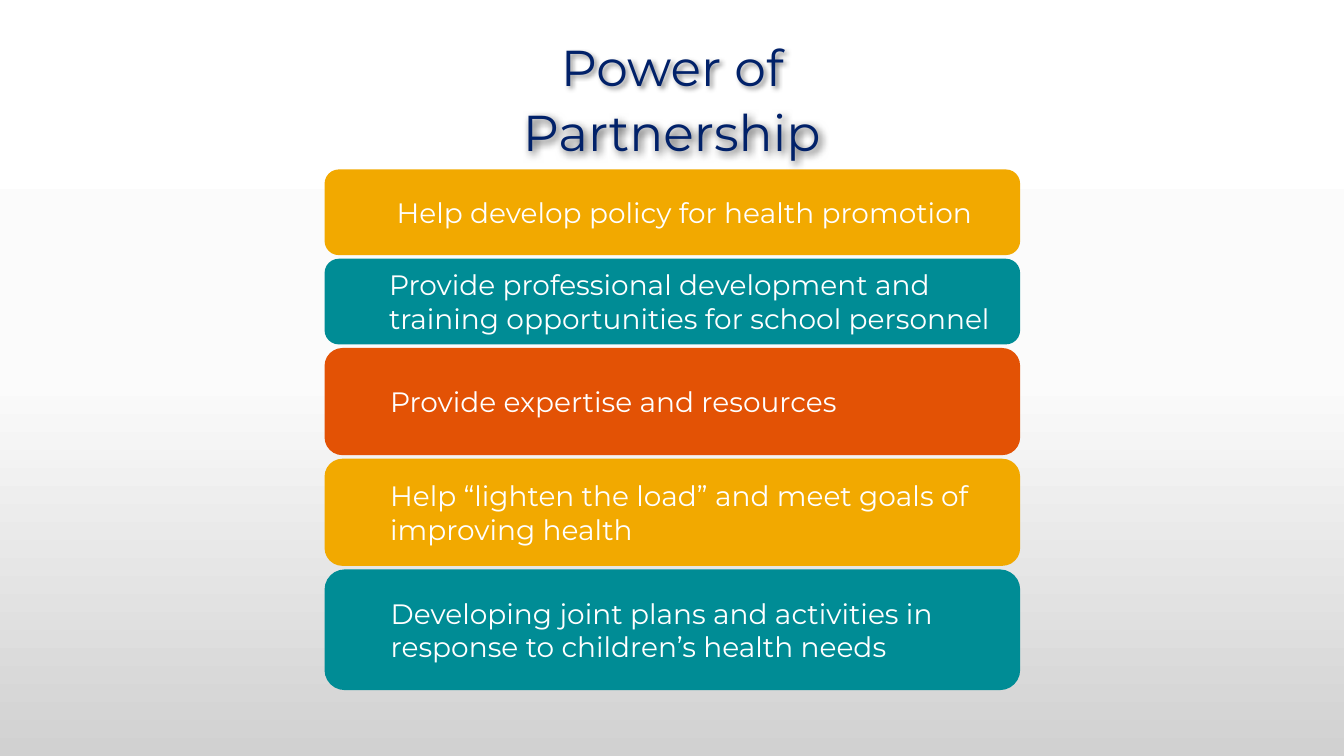
from copy import deepcopy
from dataclasses import dataclass

from lxml.etree import SubElement
from pptx import Presentation
from pptx.dml.color import RGBColor
from pptx.enum.shapes import MSO_SHAPE
from pptx.enum.text import MSO_ANCHOR, MSO_AUTO_SIZE, PP_ALIGN
from pptx.oxml.ns import qn
from pptx.slide import Slide
from pptx.util import Cm, Pt

COLOURS = {
    "navy": "012169",
    "gold": "F2A900",
    "teal": "008C95",
    "orange": "E35205",
    "white": "FFFFFF",
    "shadow": "000000",
}
BACKGROUND_STOPS = [(0, "FFFFFF"), (0.5, "FBFBFB"), (1, "D1D1D1")]
FONT = "Montserrat"
BAR_LEFT, BAR_TOP, BAR_WIDTH, BAR_GAP = 8.18, 4.27, 17.53, 0.09


@dataclass
class Heading:
    text: str
    left: float
    top: float
    width: float
    height: float
    anchor: MSO_ANCHOR
    top_inset: float
    shadow_blur: float
    shadow_opacity: int


@dataclass
class Bar:
    text: str
    colour: str
    height: float
    indent: float = 1.27


HEADINGS = [
    Heading("Power of", 2.33, 0.53, 29.21, 2.46, MSO_ANCHOR.MIDDLE, 0.13, 3, 45),
    Heading("Partnership", 4.23, 2.44, 25.4, 1.22, MSO_ANCHOR.TOP, 0.28, 6, 75),
]
BARS = [
    Bar("Help develop policy for health promotion", "gold", 2.16, 1.46),
    Bar("Provide professional development and training opportunities for school personnel",
        "teal", 2.16),
    Bar("Provide expertise and resources", "orange", 2.7),
    Bar("Help “lighten the load” and meet goals of improving health", "gold", 2.7),
    Bar("Developing joint plans and activities in response to children’s health needs",
        "teal", 3.04),
]


def paint_background(page: Slide) -> None:
    fill = page.background.fill
    fill.gradient()
    fill.gradient_angle = 270
    stop_list = next(page.element.iter(qn("a:gsLst")))
    stop_list.append(deepcopy(stop_list[-1]))
    for stop, (position, colour) in zip(fill.gradient_stops, BACKGROUND_STOPS):
        stop.position = position
        stop.color.rgb = RGBColor.from_string(colour)


def add_span(para, text: str, size: int, colour: str) -> None:
    span = para.add_run()
    span.text = text
    span.font.name = FONT
    span.font.size = Pt(size)
    span.font.color.rgb = RGBColor.from_string(COLOURS[colour])


def add_soft_shadow(box, blur: float, opacity: int) -> None:
    box.shadow.inherit = False
    effects = box.element.spPr.find(qn("a:effectLst"))
    shadow = SubElement(effects, qn("a:outerShdw"), blurRad=str(Pt(blur)),
                        dist=str(Pt(2)), dir="2700000", algn="tl", rotWithShape="0")
    colour = SubElement(shadow, qn("a:srgbClr"), val=COLOURS["shadow"])
    SubElement(colour, qn("a:alpha"), val=str(opacity * 1000))


def fill_heading(box, heading: Heading) -> None:
    box.left, box.top = Cm(heading.left), Cm(heading.top)
    box.width, box.height = Cm(heading.width), Cm(heading.height)
    frame = box.text_frame
    frame.auto_size = MSO_AUTO_SIZE.NONE
    frame.vertical_anchor = heading.anchor
    frame.margin_top = Cm(heading.top_inset)
    para = frame.paragraphs[0]
    para.alignment = PP_ALIGN.CENTER
    para.line_spacing = 0.9
    para.space_before = Pt(0)
    add_span(para, heading.text, 36, "navy")
    add_soft_shadow(box, heading.shadow_blur, heading.shadow_opacity)


def add_bar(page: Slide, bar: Bar, top: float) -> None:
    box = page.shapes.add_shape(MSO_SHAPE.ROUNDED_RECTANGLE, Cm(BAR_LEFT), Cm(top),
                                Cm(BAR_WIDTH), Cm(bar.height))
    box.shadow.inherit = False
    box.fill.solid()
    box.fill.fore_color.rgb = RGBColor.from_string(COLOURS[bar.colour])
    box.line.fill.background()
    frame = box.text_frame
    frame.word_wrap = True
    frame.vertical_anchor = MSO_ANCHOR.MIDDLE
    para = frame.paragraphs[0]
    para.level = 1
    para.alignment = PP_ALIGN.LEFT
    properties = para._p.get_or_add_pPr()
    properties.set("marL", str(Cm(bar.indent)))
    properties.set("indent", "0")
    add_span(para, bar.text, 20, "white")


def main() -> None:
    deck = Presentation()
    deck.slide_width, deck.slide_height = Cm(33.87), Cm(19.05)
    page = deck.slides.add_slide(deck.slide_layouts[0])
    paint_background(page)
    for box, heading in zip(page.placeholders, HEADINGS):
        fill_heading(box, heading)
    top = BAR_TOP
    for bar in BARS:
        add_bar(page, bar, top)
        top += bar.height + BAR_GAP
    deck.save("out.pptx")


if __name__ == "__main__":
    main()
